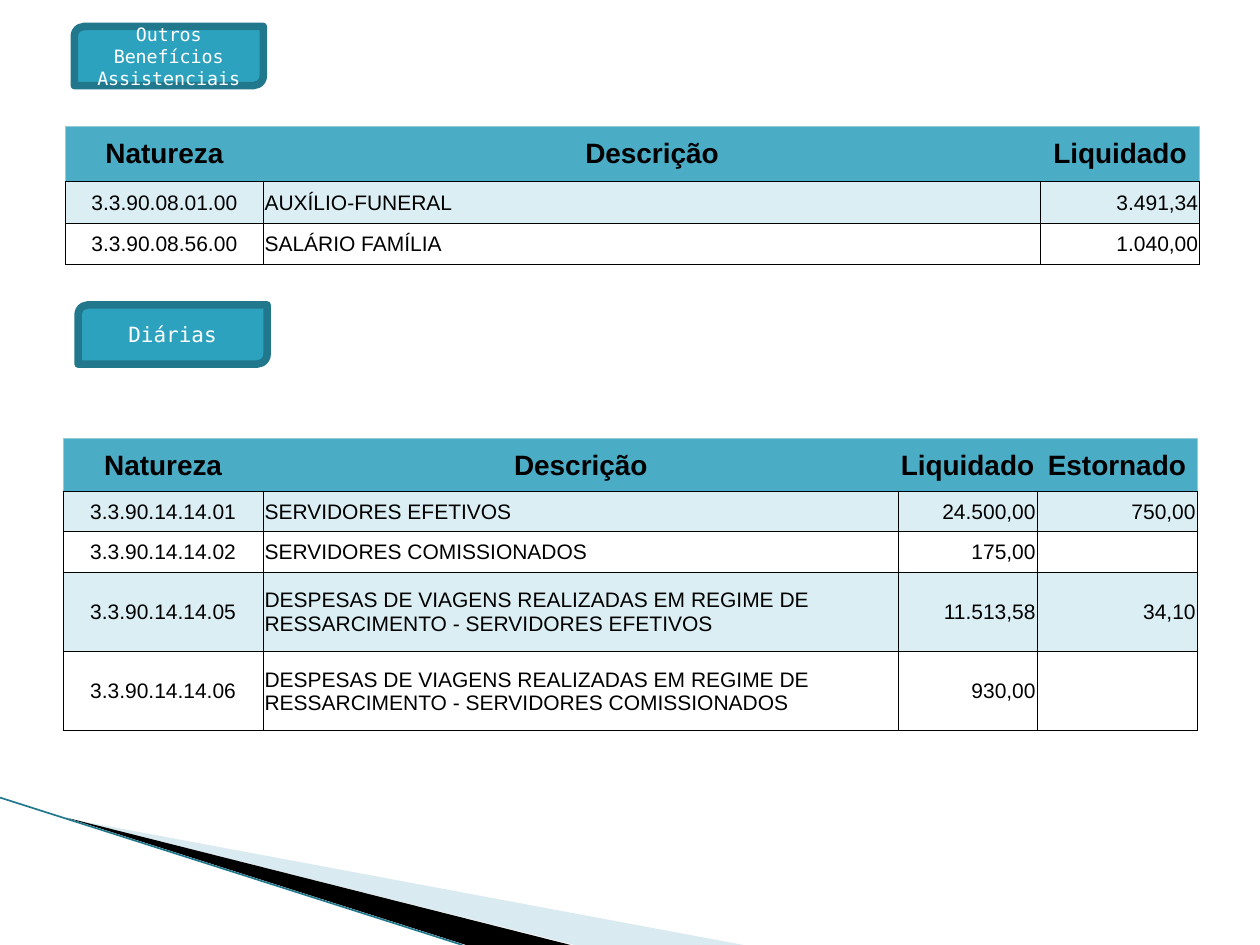
from lxml.etree import SubElement
from pptx import Presentation
from pptx.dml.color import RGBColor
from pptx.enum.shapes import MSO_CONNECTOR, MSO_SHAPE
from pptx.enum.text import MSO_ANCHOR, PP_ALIGN
from pptx.oxml.ns import qn
from pptx.util import Inches, Pt

TEAL, DARK_TEAL = "2DA2BF", "21788D"
HEADER, HEADER_EDGE, BAND = "4BACC6", "92CDDC", "DAEEF3"
BLACK, WHITE = "000000", "FFFFFF"


def paint(target, color):
    """Give a fill or line format a solid colour."""
    target.solid()
    target.fore_color.rgb = RGBColor.from_string(color)


def set_border(cell, side, color):
    """Draw one cell side (L, R, T or B); no colour means no line."""
    line = SubElement(cell._tc.get_or_add_tcPr(), qn(f"a:ln{side}"), w=str(Pt(0.5)))
    if color is None:
        SubElement(line, qn("a:noFill"))
    else:
        SubElement(SubElement(line, qn("a:solidFill")), qn("a:srgbClr"), val=color)


deck = Presentation()
deck.slide_width, deck.slide_height = Inches(10), Inches(7.5)
slide = deck.slides.add_slide(deck.slide_layouts[6])
shapes = slide.shapes

# Corner wedges and their edge line
wedges = [
    ("A0CBDC", 40, [(0.55, 6.5), (5.9, 7.5), (4.56, 7.5)]),
    (BLACK, 100, [(0.53, 6.49), (4.53, 7.5), (3.7, 7.5)]),
]
for color, opacity, points in wedges:
    corners = [(Inches(x), Inches(y)) for x, y in points]
    builder = shapes.build_freeform(*corners[0])
    builder.add_line_segments(corners[1:], close=True)
    wedge = builder.convert_to_shape()
    wedge.shadow.inherit = False
    wedge.line.fill.background()
    paint(wedge.fill, color)
    if opacity < 100:
        tint = wedge._element.spPr.find(qn("a:solidFill"))[0]
        SubElement(tint, qn("a:alpha"), val=str(opacity * 1000))

edge = shapes.add_connector(
    MSO_CONNECTOR.STRAIGHT, 0, Inches(6.33), Inches(3.67), Inches(7.5))
paint(edge.line.fill, DARK_TEAL)
edge.line.width = Pt(0.95)
SubElement(edge._element.spPr, qn("a:effectLst"))

# Section labels
labels = [
    ("Outros Benefícios Assistenciais", 0.59, 0.21, 10.5),
    ("Diárias", 0.62, 2.42, 12),
]
for text, left, top, size in labels:
    label = shapes.add_shape(
        MSO_SHAPE.ROUND_2_DIAG_RECTANGLE,
        Inches(left), Inches(top), Inches(1.5), Inches(0.47))
    label.shadow.inherit = False
    paint(label.fill, TEAL)
    paint(label.line.fill, DARK_TEAL)
    label.line.width = Pt(4.33)
    frame = label.text_frame
    frame.word_wrap = True
    frame.vertical_anchor = MSO_ANCHOR.MIDDLE
    para = frame.paragraphs[0]
    para.text = text
    para.alignment = PP_ALIGN.CENTER
    para.font.name, para.font.size = "DejaVu Sans Mono", Pt(size)
    para.font.color.rgb = RGBColor.from_string(WHITE)

# Expense tables: left, top, column widths, row heights, rows
travel = "DESPESAS DE VIAGENS REALIZADAS EM REGIME DE RESSARCIMENTO - SERVIDORES"
tables = [
    (0.52, 1, [1.57, 6.17, 1.26], [0.44, 0.33, 0.33], [
        ("Natureza", "Descrição", "Liquidado"),
        ("3.3.90.08.01.00", "AUXÍLIO-FUNERAL", "3.491,34"),
        ("3.3.90.08.56.00", "SALÁRIO FAMÍLIA", "1.040,00"),
    ]),
    (0.5, 3.48, [1.59, 5.04, 1.1, 1.27], [0.42, 0.32, 0.32, 0.63, 0.63], [
        ("Natureza", "Descrição", "Liquidado", "Estornado"),
        ("3.3.90.14.14.01", "SERVIDORES EFETIVOS", "24.500,00", "750,00"),
        ("3.3.90.14.14.02", "SERVIDORES COMISSIONADOS", "175,00", ""),
        ("3.3.90.14.14.05", f"{travel} EFETIVOS", "11.513,58", "34,10"),
        ("3.3.90.14.14.06", f"{travel} COMISSIONADOS", "930,00", ""),
    ]),
]
body_alignments = [PP_ALIGN.CENTER, PP_ALIGN.LEFT, PP_ALIGN.RIGHT, PP_ALIGN.RIGHT]

for left, top, widths, heights, rows in tables:
    table = shapes.add_table(
        len(rows), len(widths), Inches(left), Inches(top),
        Inches(sum(widths)), Inches(sum(heights))).table
    for column, width in zip(table.columns, widths):
        column.width = Inches(width)
    for row, height in zip(table.rows, heights):
        row.height = Inches(height)

    last = len(widths) - 1
    for row_index, texts in enumerate(rows):
        is_header = row_index == 0
        for column_index, text in enumerate(texts):
            cell = table.cell(row_index, column_index)
            cell.margin_left = cell.margin_right = cell.margin_top = Inches(0.01)
            cell.margin_bottom = 0
            cell.vertical_anchor = MSO_ANCHOR.MIDDLE

            if is_header:
                set_border(cell, "L", HEADER_EDGE if column_index == 0 else None)
                set_border(cell, "R", HEADER_EDGE if column_index == last else None)
                set_border(cell, "T", HEADER_EDGE)
                set_border(cell, "B", BLACK)
                paint(cell.fill, HEADER)
            else:
                for side in "LRTB":
                    set_border(cell, side, BLACK)
                if row_index % 2:
                    paint(cell.fill, BAND)
                else:
                    cell.fill.background()

            para = cell.text_frame.paragraphs[0]
            para.text = text
            para.alignment = (
                PP_ALIGN.CENTER if is_header else body_alignments[column_index])
            para.font.name = "Arial"
            para.font.size = Pt(16 if is_header else 12)
            para.font.bold = is_header
            para.font.color.rgb = RGBColor.from_string(BLACK)

deck.save("out.pptx")
